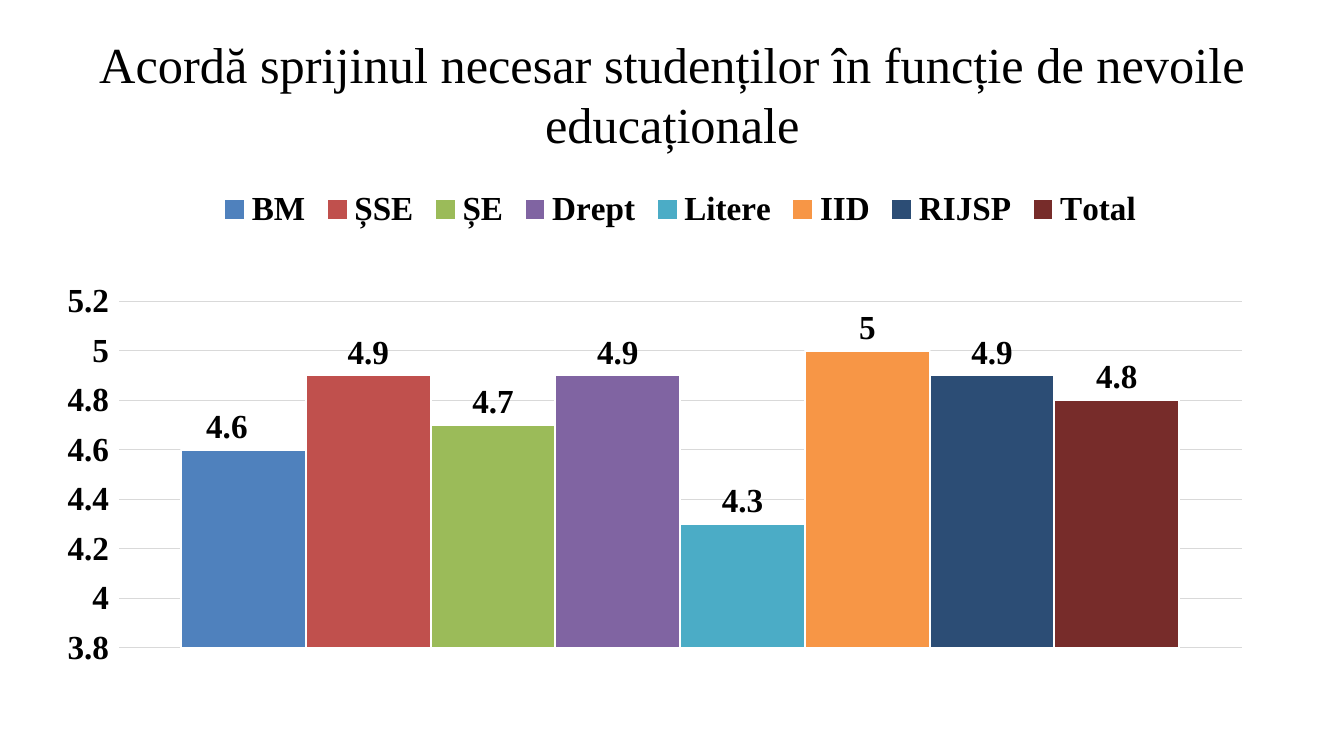
"""Build a slide with a column chart of ratings for student support."""
import pptx
import pptx.chart.data
import pptx.dml.color
import pptx.enum.chart
import pptx.enum.text
import pptx.oxml
import pptx.oxml.ns
import pptx.util
from pptx.util import Inches

FONT = "Times New Roman"
COLORS = {
    "text": "000000", "grid": "D9D9D9", "edge": "FFFFFF",
    "BM": "4F81BD", "ȘSE": "C0504D", "ȘE": "9BBB59", "Drept": "8064A2",
    "Litere": "4BACC6", "IID": "F79646", "RIJSP": "2C4D75", "Total": "772C2A",
}
RATINGS = {"BM": 4.6, "ȘSE": 4.9, "ȘE": 4.7, "Drept": 4.9,
           "Litere": 4.3, "IID": 5, "RIJSP": 4.9, "Total": 4.8}
TITLE_FONT = {"name": FONT, "size": pptx.util.Pt(36)}
CHART_FONT = {"name": FONT, "size": pptx.util.Pt(24), "bold": True}
VALUE_AXIS = {
    "minimum_scale": 3.8, "maximum_scale": 5.2, "major_unit": 0.2,
    "has_major_gridlines": True,
    "major_tick_mark": pptx.enum.chart.XL_TICK_MARK.OUTSIDE,
}
LABELS = {
    "show_value": True, "number_format": "General", "number_format_is_linked": False,
    "position": pptx.enum.chart.XL_LABEL_POSITION.OUTSIDE_END,
}


def set_all(obj, values):
    """Set each attribute named in a dict."""
    for name, value in values.items():
        setattr(obj, name, value)


def rgb(name):
    """Return the colour stored under a name."""
    return pptx.dml.color.RGBColor.from_string(COLORS[name])


def style_font(font, values):
    """Apply font values and the text colour."""
    set_all(font, values)
    font.color.rgb = rgb("text")


def style_line(line, color, width):
    """Give a line a colour and a width in points."""
    line.color.rgb = rgb(color)
    line.width = pptx.util.Pt(width)


def manual_layout(values, inner=False):
    """Return a chart layout element with the given fractions."""
    ns = pptx.oxml.ns.nsdecls("c")
    parts = '<c:layoutTarget val="inner"/>' if inner else ""
    if inner:
        parts += '<c:xMode val="edge"/><c:yMode val="edge"/>'
    parts += "".join(f'<c:{key} val="{val}"/>' for key, val in values.items())
    return pptx.oxml.parse_xml(
        f"<c:layout {ns}><c:manualLayout>{parts}</c:manualLayout></c:layout>")


def add_title(s, text):
    """Add the centred slide title."""
    tf = s.shapes.add_textbox(Inches(0.67), Inches(0.3), Inches(12), Inches(1.25)).text_frame
    tf.word_wrap = True
    tf.vertical_anchor = pptx.enum.text.MSO_ANCHOR.MIDDLE
    p = tf.paragraphs[0]
    p.alignment = pptx.enum.text.PP_ALIGN.CENTER
    r = p.add_run()
    r.text = text
    style_font(r.font, TITLE_FONT)


def style_series(series):
    """Colour one series and show its values."""
    series.format.fill.solid()
    series.format.fill.fore_color.rgb = rgb(series.name)
    style_line(series.format.line, "edge", 1.5)
    set_all(series.data_labels, LABELS)
    style_font(series.data_labels.font, CHART_FONT)


def shift_label(series, x):
    """Move the first label of a series sideways by a fraction of the chart."""
    label = series.points[0].data_label
    label.position = LABELS["position"]
    style_font(label.font, CHART_FONT)
    idx = series.data_labels._element.find(pptx.oxml.ns.qn("c:dLbl")).find(
        pptx.oxml.ns.qn("c:idx"))
    idx.addnext(manual_layout({"x": x, "y": 0}))


def style_axes(chart):
    """Hide the category axis and format the value axis."""
    chart.category_axis.visible = False
    axis = chart.value_axis
    set_all(axis, VALUE_AXIS)
    axis.format.line.fill.background()
    style_line(axis.major_gridlines.format.line, "grid", 0.75)
    set_all(axis.tick_labels, {"number_format": "General", "number_format_is_linked": False})
    style_font(axis.tick_labels.font, CHART_FONT)


def add_rating_chart(s):
    """Add the clustered column chart with one series per group."""
    data = pptx.chart.data.CategoryChartData()
    data.categories = ["1"]
    for name, value in RATINGS.items():
        data.add_series(name, [value])
    chart = s.shapes.add_chart(
        pptx.enum.chart.XL_CHART_TYPE.COLUMN_CLUSTERED,
        Inches(0.67), Inches(1.75), Inches(12), Inches(4.95), data).chart
    set_all(chart, {"has_title": False, "has_legend": True})
    style_font(chart.font, CHART_FONT)
    set_all(chart.legend, {"position": pptx.enum.chart.XL_LEGEND_POSITION.TOP,
                           "include_in_layout": False})
    style_font(chart.legend.font, CHART_FONT)
    style_axes(chart)
    plot = chart.plots[0]
    set_all(plot, {"gap_width": 100, "vary_by_categories": False})
    for series in plot.series:
        style_series(series)
    shift_label(plot.series[0], -0.014)
    area = chart._chartSpace.chart.plotArea
    for old in area.findall(pptx.oxml.ns.qn("c:layout")):
        area.remove(old)
    area.insert(0, manual_layout({"x": 0.03, "y": 0.25, "w": 0.94, "h": 0.695}, inner=True))


def main():
    """Create and save the presentation."""
    prs = pptx.Presentation()
    set_all(prs, {"slide_width": Inches(13.33), "slide_height": Inches(7.5)})
    s = prs.slides.add_slide(prs.slide_layouts[6])
    add_title(s, "Acordă sprijinul necesar studenților în funcție de nevoile educaționale")
    add_rating_chart(s)
    prs.save("out.pptx")


if __name__ == "__main__":
    main()
